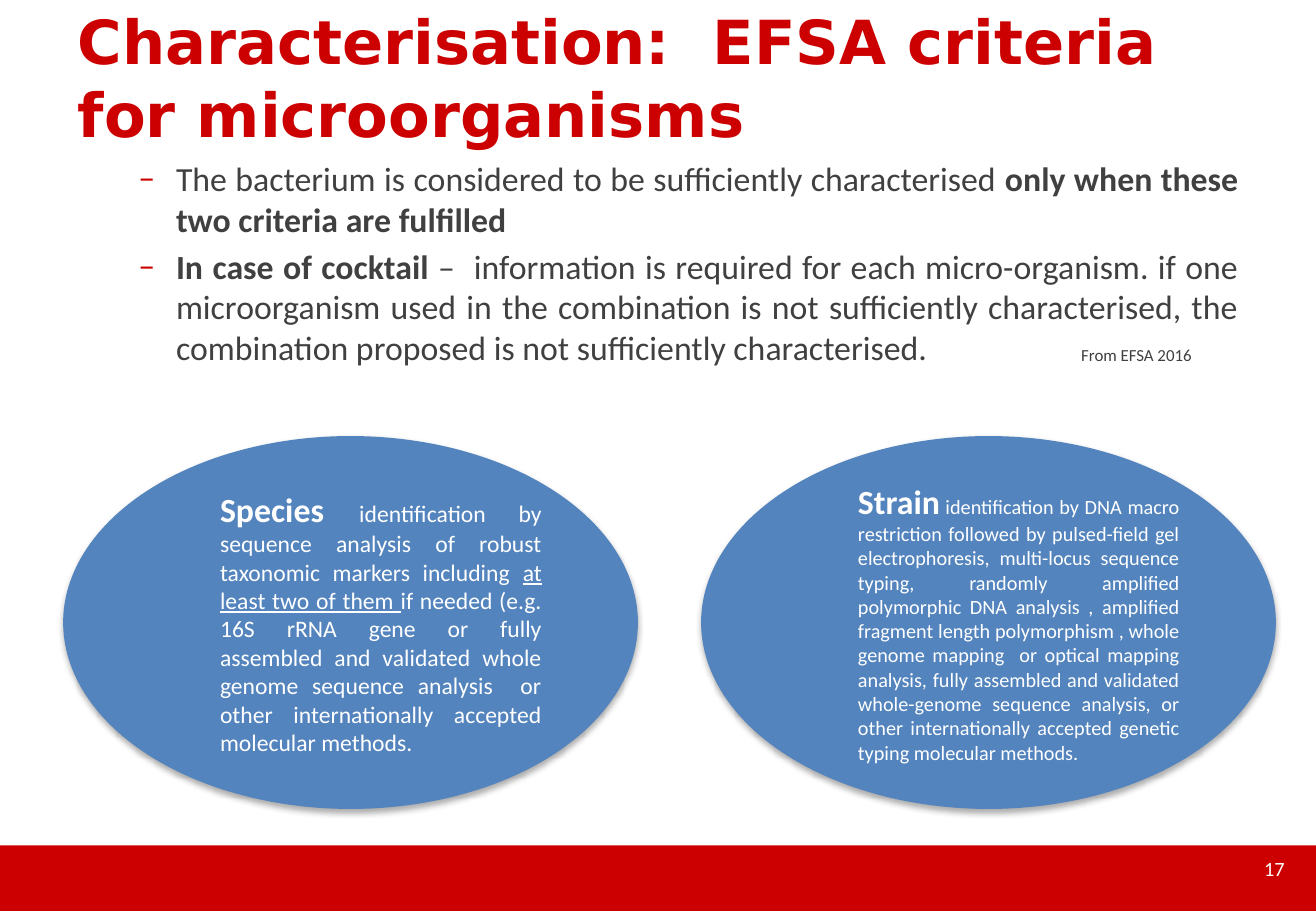
from lxml import etree
from pptx import Presentation
from pptx.dml.color import RGBColor
from pptx.enum.shapes import MSO_SHAPE
from pptx.enum.text import MSO_ANCHOR, PP_ALIGN
from pptx.oxml.ns import qn
from pptx.util import Inches, Pt

RECTANGLE, OVAL = MSO_SHAPE.RECTANGLE, MSO_SHAPE.OVAL
TOP, MIDDLE = MSO_ANCHOR.TOP, MSO_ANCHOR.MIDDLE
LEFT, RIGHT, JUSTIFY = PP_ALIGN.LEFT, PP_ALIGN.RIGHT, PP_ALIGN.JUSTIFY

COLORS = {"red": "CC0000", "blue": "5384BE", "text": "404040",
          "white": "FFFFFF", "shadow": "000000"}

SLIDE_WIDTH, SLIDE_HEIGHT = 10.83, 7.5
TITLE_BOX = (0.54, 0.28, 9.75, 0.7)
BODY_BOX = (0.54, 1.25, 9.75, 5.65)
FOOTER_BOX = (0, 6.96, SLIDE_WIDTH, 0.54)
CRITERIA_BOX = (0.52, 3.59, 9.98, 3.07)
CRITERION_WIDTH = 4.73

TITLE_FORMAT = {"name": "DejaVu Sans", "size": Pt(36), "bold": True}
BODY_FORMAT = {"name": "Calibri", "size": Pt(20)}
BOLD_FORMAT = {**BODY_FORMAT, "bold": True}
SOURCE_FORMAT = {**BODY_FORMAT, "size": Pt(10)}
NUMBER_FORMAT = {**BODY_FORMAT, "size": Pt(12)}
SPECIES_FORMAT = {**BODY_FORMAT, "size": Pt(14)}
STRAIN_FORMAT = {**BODY_FORMAT, "size": Pt(12)}

BULLETS = [
    [("The bacterium is considered to be sufficiently characterised ", BODY_FORMAT),
     ("only when these two criteria are fulfilled", BOLD_FORMAT)],
    [("In case of cocktail ", BOLD_FORMAT),
     ("–  information is required for each micro-organism. if one microorganism used "
      "in the combination is not sufficiently characterised, the combination proposed "
      "is not sufficiently characterised.", BODY_FORMAT)],
]
CRITERIA = [
    [("Species ", BOLD_FORMAT),
     ("identification by sequence analysis of robust taxonomic markers including ",
      SPECIES_FORMAT),
     ("at least two of them ", {**SPECIES_FORMAT, "underline": True}),
     ("if needed (e.g. 16S rRNA gene or fully assembled and validated whole genome "
      "sequence analysis  or other internationally accepted molecular methods.",
      SPECIES_FORMAT)],
    [("Strain", BOLD_FORMAT),
     (" ", {**BOLD_FORMAT, "size": Pt(11)}),
     ("identification by DNA macro restriction followed by pulsed-field gel "
      "electrophoresis, multi-locus sequence typing, randomly amplified polymorphic "
      "DNA analysis , amplified fragment length polymorphism , whole genome mapping  "
      "or optical mapping analysis, fully assembled and validated whole-genome "
      "sequence analysis, or other internationally accepted genetic typing molecular "
      "methods.", STRAIN_FORMAT)],
]


def inches(box):
    return [Inches(length) for length in box]


def add_runs(paragraph, runs, color, alignment):
    paragraph.alignment = alignment
    for text, font_format in runs:
        run = paragraph.add_run()
        run.text = text
        run.font.color.rgb = RGBColor.from_string(COLORS[color])
        for attribute, value in font_format.items():
            setattr(run.font, attribute, value)


def add_text(slide, box, runs, color, alignment, anchor=MIDDLE):
    frame = slide.shapes.add_textbox(*inches(box)).text_frame
    frame.word_wrap = True
    frame.vertical_anchor = anchor
    add_runs(frame.paragraphs[0], runs, color, alignment)
    return frame


def add_filled_shape(slide, kind, box, color):
    shape = slide.shapes.add_shape(kind, *inches(box))
    shape.shadow.inherit = False
    shape.fill.solid()
    shape.fill.fore_color.rgb = RGBColor.from_string(COLORS[color])
    shape.line.fill.background()
    return shape


def add_color(parent, color):
    return etree.SubElement(parent, qn("a:srgbClr"), val=COLORS[color])


def add_dash_bullet(paragraph):
    properties = paragraph._p.get_or_add_pPr()
    properties.set("marL", str(Inches(0.81)))
    properties.set("indent", str(Inches(-0.31)))
    add_color(etree.SubElement(properties, qn("a:buClr")), "red")
    etree.SubElement(properties, qn("a:buFont"), typeface="Calibri")
    etree.SubElement(properties, qn("a:buChar"), char="–")


def add_soft_shadow(shape):
    effects = shape._element.spPr.find(qn("a:effectLst"))
    shadow = etree.SubElement(effects, qn("a:outerShdw"), blurRad=str(Pt(3.5)),
                              dist=str(Pt(2.2)), dir="5400000", rotWithShape="0")
    etree.SubElement(add_color(shadow, "shadow"), qn("a:alpha"), val="32000")


def add_body(slide, box):
    """Place the bulleted statements and the source beside their last line."""
    left, top, width, _ = box
    frame = add_text(slide, box, BULLETS[0], "text", JUSTIFY, TOP)
    add_dash_bullet(frame.paragraphs[0])
    for runs in BULLETS[1:]:
        paragraph = frame.add_paragraph()
        add_dash_bullet(paragraph)
        paragraph.space_before = Pt(4)
        add_runs(paragraph, runs, "text", JUSTIFY)
    add_text(slide, (left + width - 1.49, top + 1.54, 1.3, 0.26),
             [("From EFSA 2016", SOURCE_FORMAT)], "text", LEFT)


def add_criteria(slide, box):
    """Spread one ellipse per criterion over the width of the box."""
    left, top, width, height = box
    step = (width - CRITERION_WIDTH) / (len(CRITERIA) - 1)
    for index, runs in enumerate(CRITERIA):
        ellipse = add_filled_shape(
            slide, OVAL, (left + index * step, top, CRITERION_WIDTH, height), "blue")
        add_soft_shadow(ellipse)
        frame = ellipse.text_frame
        frame.word_wrap = True
        frame.vertical_anchor = MIDDLE
        paragraph = frame.paragraphs[0]
        paragraph._p.get_or_add_pPr().set("marL", str(Inches(0.5)))
        add_runs(paragraph, runs, "white", JUSTIFY)


def add_footer(slide, box):
    left, top, width, _ = box
    add_filled_shape(slide, RECTANGLE, box, "red")
    add_text(slide, (left + width - 2.69, top - 0.01, 2.53, 0.4),
             [("17", NUMBER_FORMAT)], "white", RIGHT)


def main():
    presentation = Presentation()
    presentation.slide_width = Inches(SLIDE_WIDTH)
    presentation.slide_height = Inches(SLIDE_HEIGHT)
    slide = presentation.slides.add_slide(presentation.slide_layouts[6])
    add_footer(slide, FOOTER_BOX)
    add_text(slide, TITLE_BOX,
             [("Characterisation:  EFSA criteria for microorganisms", TITLE_FORMAT)],
             "red", LEFT)
    add_body(slide, BODY_BOX)
    add_criteria(slide, CRITERIA_BOX)
    presentation.save("out.pptx")


if __name__ == "__main__":
    main()
